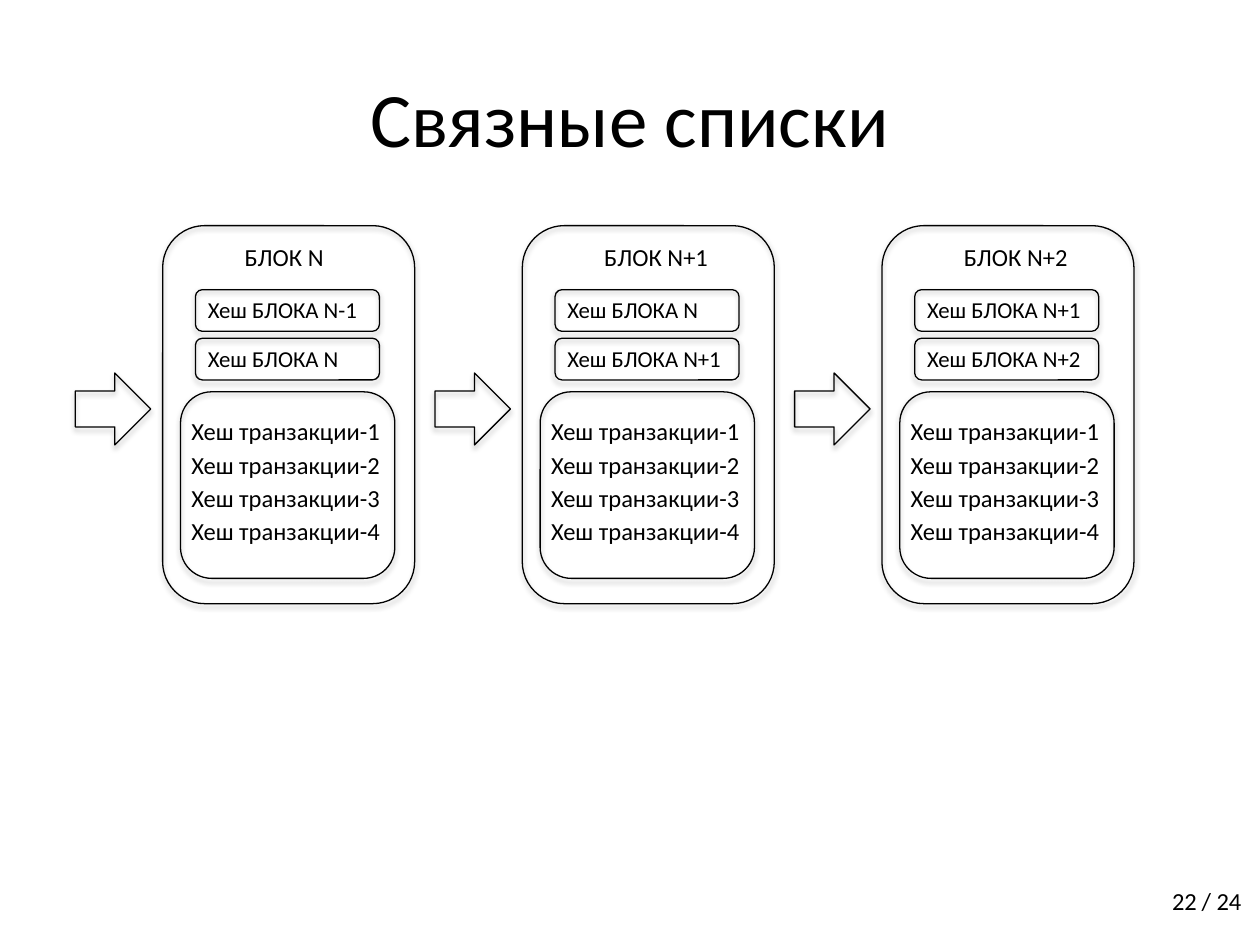
from lxml import etree
from pptx import Presentation
from pptx import util as u
from pptx.dml.color import RGBColor
from pptx.enum import shapes, text
from pptx.oxml.ns import qn

TITLE = "Связные списки"
BLOCKS = [
    ("БЛОК N", ("Хеш БЛОКА N-1", "Хеш БЛОКА N")),
    ("БЛОК N+1", ("Хеш БЛОКА N", "Хеш БЛОКА N+1")),
    ("БЛОК N+2", ("Хеш БЛОКА N+1", "Хеш БЛОКА N+2")),
]
TRANSACTIONS = [f"Хеш транзакции-{number}" for number in range(1, 5)]
PAGE_NUMBER = [
    ("22", (22.68, 17.65, 1.45, 1.02), text.PP_ALIGN.RIGHT),
    ("/ 24", (24.13, 17.65, 0.99, 1.02), text.PP_ALIGN.CENTER),
]

BLACK = "000000"
FIRST_LEFT, BLOCK_PITCH = 3.28, 7.25
HASH_TOP, HASH_PITCH = 5.84, 0.98
TRANSACTION_TOP, TRANSACTION_PITCH = 8.27, 0.67
ROUNDED = shapes.MSO_SHAPE.ROUNDED_RECTANGLE
ARROW = shapes.MSO_SHAPE.RIGHT_ARROW


def color(value):
    return RGBColor.from_string(value)


def set_all(target, values):
    for name, value in values.items():
        setattr(target, name, value)


def place(left, top, width, height):
    return [u.Cm(value) for value in (left, top, width, height)]


def write(frame, words, size, align, **frame_format):
    set_all(frame, {"word_wrap": True, **frame_format})
    para = frame.paragraphs[0]
    para.alignment = align
    span = para.add_run()
    span.text = words
    set_all(span.font, {"name": "Calibri", "size": u.Pt(size)})
    span.font.color.rgb = color(BLACK)


def add_label(page, words, area, size=14, align=text.PP_ALIGN.LEFT, **frame_format):
    box = page.shapes.add_textbox(*place(*area))
    write(box.text_frame, words, size, align, **frame_format)


def add_outline(page, kind, area):
    shape = page.shapes.add_shape(kind, *place(*area))
    shape.fill.background()
    shape.line.color.rgb = color(BLACK)
    shape.line.width = u.Pt(0.75)
    shape.shadow.inherit = False
    effects = shape._element.spPr.find(qn("a:effectLst"))
    shadow = etree.SubElement(
        effects, qn("a:outerShdw"), blurRad=str(u.Pt(3.1)), dist=str(u.Pt(1.8)),
        dir="5400000", rotWithShape="0")
    tint = etree.SubElement(shadow, qn("a:srgbClr"), val=BLACK)
    etree.SubElement(tint, qn("a:alpha"), val="35000")


def add_block(page, left, name, hashes):
    add_outline(page, ROUNDED, (left, 4.55, 5.08, 7.62))
    add_label(page, name, (left + 1.4, 4.75, 2.64, 0.86))
    add_outline(page, ROUNDED, (left + 0.36, 7.9, 4.32, 3.76))
    for row, words in enumerate(TRANSACTIONS):
        top = TRANSACTION_TOP + row * TRANSACTION_PITCH
        add_label(page, words, (left + 0.33, top, 4.39, 0.86))
    for row, words in enumerate(hashes):
        top = HASH_TOP + row * HASH_PITCH
        add_outline(page, ROUNDED, (left + 0.66, top, 3.71, 0.84))
        add_label(page, words, (left + 0.66, top, 4.39, 0.81), size=13)
    add_outline(page, ARROW, (left - 1.76, 7.52, 1.52, 1.45))


def main():
    deck = Presentation()
    set_all(deck, {"slide_width": u.Cm(25.4), "slide_height": u.Cm(19.05)})
    page = deck.slides.add_slide(deck.slide_layouts[5])
    title = page.shapes.title
    set_all(title, dict(zip(("left", "top", "width", "height"),
                            place(1.27, 0.76, 22.86, 3.18))))
    write(title.text_frame, TITLE, 44, text.PP_ALIGN.CENTER,
          vertical_anchor=text.MSO_ANCHOR.MIDDLE)
    for index, (name, hashes) in enumerate(BLOCKS):
        add_block(page, FIRST_LEFT + index * BLOCK_PITCH, name, hashes)
    margins = dict.fromkeys(
        ("margin_left", "margin_top", "margin_right", "margin_bottom"), 0)
    for words, area, align in PAGE_NUMBER:
        add_label(page, words, area, align=align, word_wrap=False,
                  vertical_anchor=text.MSO_ANCHOR.MIDDLE, **margins)
    deck.save("out.pptx")


if __name__ == "__main__":
    main()
